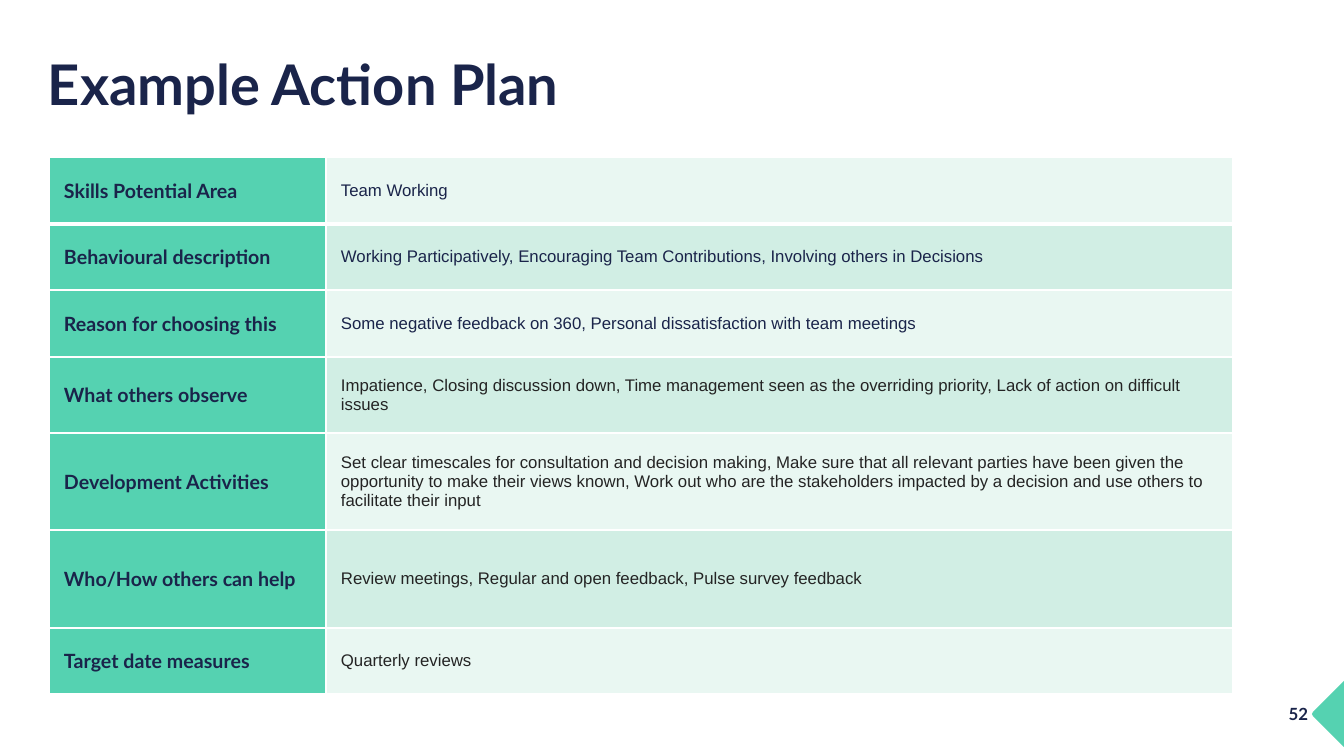
"""Build the Example Action Plan slide."""
from pptx import Presentation
from pptx.dml.color import RGBColor
from pptx.enum.text import MSO_ANCHOR as Anchor, PP_ALIGN as Align
from pptx.oxml import parse_xml
from pptx.oxml.ns import nsdecls
from pptx.util import Emu, Pt

PX = 914400 / 100.8
NAVY = RGBColor(0x1A, 0x24, 0x4A)
CHARCOAL = RGBColor(0x24, 0x24, 0x24)
TEAL = RGBColor(0x55, 0xD2, 0xB1)
PALE = RGBColor(0xE9, 0xF7, 0xF2)
MINT = RGBColor(0xD1, 0xEE, 0xE4)


def px(*lengths):
    """Turn pixel lengths into EMU."""
    return [Emu(round(length * PX)) for length in lengths]


def write(frame, text, size, font, color, bold):
    """Add one run to the first paragraph and return the paragraph."""
    para = frame.paragraphs[0]
    span = para.add_run()
    span.text = text
    span.font.size = Pt(size)
    span.font.name = font
    span.font.bold = bold
    span.font.color.rgb = color
    return para


deck = Presentation()
deck.slide_width, deck.slide_height = px(1344, 756)
page = deck.slides.add_slide(deck.slide_layouts[6])

corner = page.shapes.build_freeform(1344, 681, scale=PX)
corner.add_line_segments([(1313, 712), (1312, 714), (1313, 716), (1344, 747)])
arrow = corner.convert_to_shape()
arrow.shadow.inherit = False
arrow.fill.solid()
arrow.fill.fore_color.rgb = TEAL
arrow.line.fill.background()

number = page.shapes.add_textbox(*px(1248, 699, 70, 30)).text_frame
number.word_wrap = True
write(number, "52", 12, "Lato", NAVY, True).alignment = Align.RIGHT

title = page.shapes.add_textbox(*px(38, 47, 1159, 80)).text_frame
title.word_wrap = True
title.vertical_anchor = Anchor.MIDDLE
write(title, "Example Action Plan", 40, "Lato", NAVY, True).line_spacing = 0.9

plan = [
    (67, "Skills Potential Area", "Team Working", NAVY),
    (66, "Behavioural description",
     "Working Participatively, Encouraging Team Contributions, "
     "Involving others in Decisions", NAVY),
    (67, "Reason for choosing this",
     "Some negative feedback on 360, Personal dissatisfaction with team meetings", NAVY),
    (76, "What others observe",
     "Impatience, Closing discussion down, Time management seen as the "
     "overriding priority, Lack of action on difficult issues", CHARCOAL),
    (97, "Development Activities",
     "Set clear timescales for consultation and decision making, Make sure that "
     "all relevant parties have been given the opportunity to make their views "
     "known, Work out who are the stakeholders impacted by a decision and use "
     "others to facilitate their input", CHARCOAL),
    (98, "Who/How others can help",
     "Review meetings, Regular and open feedback, Pulse survey feedback", CHARCOAL),
    (66, "Target date measures", "Quarterly reviews", CHARCOAL),
]
table_height = sum(row[0] for row in plan)
table = page.shapes.add_table(len(plan), 2, *px(49, 157, 1184, table_height)).table
table.first_row = False
table.horz_banding = False
table.columns[0].width, table.columns[1].width = px(277, 907)

for index, (height, label, detail, detail_color) in enumerate(plan):
    table.rows[index].height = px(height)[0]
    band = MINT if index % 2 else PALE
    styles = [(label, 14, "Lato", NAVY, True, TEAL),
              (detail, 12, "Arial", detail_color, False, band)]
    for column, (text, size, font, color, bold, fill) in enumerate(styles):
        cell = table.cell(index, column)
        cell.margin_left, cell.margin_right, cell.margin_top, cell.margin_bottom = px(15, 15, 15, 15)
        cell.vertical_anchor = Anchor.MIDDLE
        write(cell.text_frame, text, size, font, color, bold)
        for side in "LRTB":
            thick = (index, side) in [(0, "B"), (1, "T")]
            cell._tc.get_or_add_tcPr().append(parse_xml(
                f'<a:ln{side} {nsdecls("a")} w="{Pt(3 if thick else 1)}">'
                f'<a:solidFill><a:srgbClr val="FFFFFF"/></a:solidFill></a:ln{side}>'))
        cell.fill.solid()
        cell.fill.fore_color.rgb = fill

deck.save("out.pptx")
